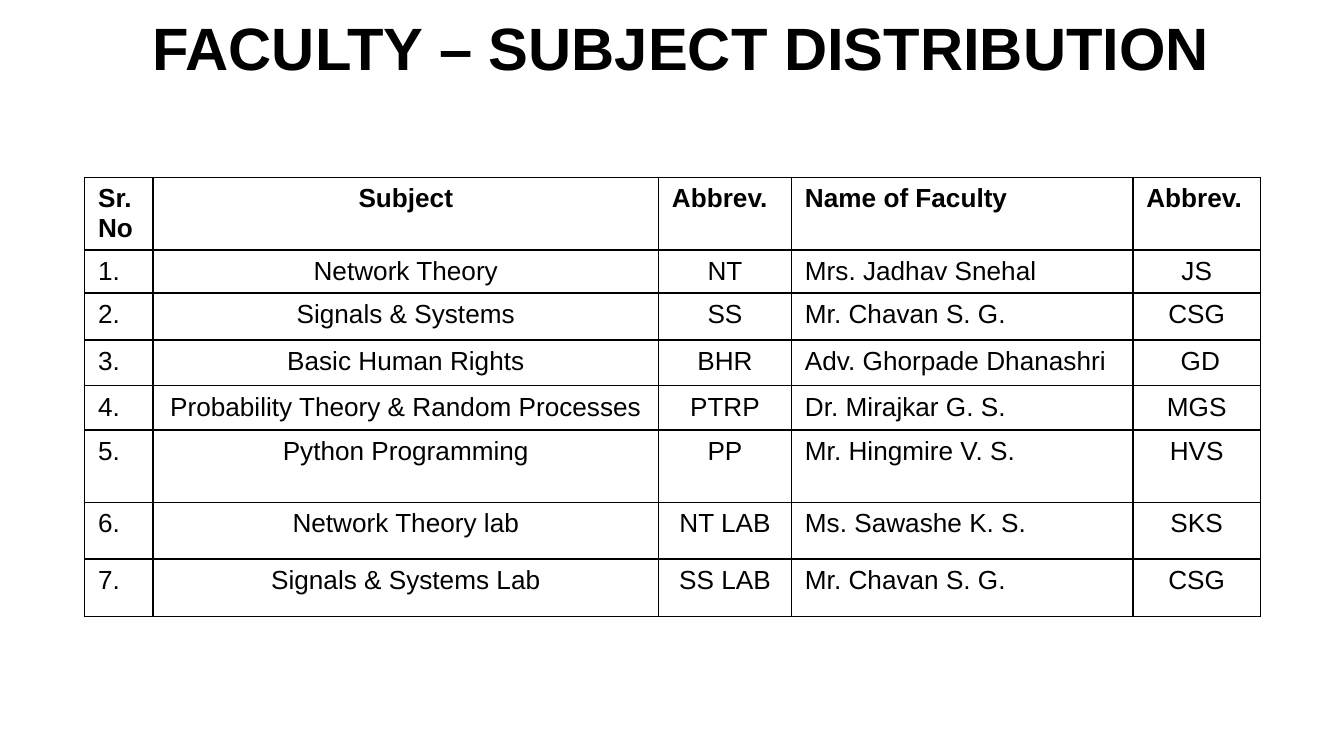
"""Build the faculty and subject distribution slide."""
import lxml.etree
import pptx
import pptx.dml.color
import pptx.enum.text
import pptx.oxml.ns
import pptx.util

Inches = pptx.util.Inches
Pt = pptx.util.Pt
ALIGN = pptx.enum.text.PP_ALIGN
ANCHOR = pptx.enum.text.MSO_ANCHOR
BLACK = pptx.dml.color.RGBColor(0x00, 0x00, 0x00)
WHITE = pptx.dml.color.RGBColor(0xFF, 0xFF, 0xFF)

HEADER = ["Sr.\nNo", "Subject", "Abbrev.", "Name of Faculty", "Abbrev."]
SUBJECTS = [
    ("Network Theory", "NT", "Mrs. Jadhav Snehal", "JS"),
    ("Signals & Systems", "SS", "Mr. Chavan S. G.", "CSG"),
    ("Basic Human Rights", "BHR", "Adv. Ghorpade Dhanashri", " GD"),
    ("Probability Theory & Random Processes", "PTRP", "Dr. Mirajkar G. S.", "MGS"),
    ("Python Programming", "PP", "Mr. Hingmire V. S.", "HVS"),
    ("Network Theory lab", "NT LAB", "Ms. Sawashe K. S.", "SKS"),
    ("Signals & Systems Lab", "SS LAB", "Mr. Chavan S. G.", "CSG"),
]
COL_WIDTHS = [0.51, 3.76, 0.99, 2.54, 0.95]
ROW_HEIGHTS = [0.54, 0.32, 0.35, 0.34, 0.33, 0.54, 0.42, 0.43]
HEADER_ALIGN = [ALIGN.LEFT, ALIGN.CENTER, ALIGN.LEFT, ALIGN.LEFT, ALIGN.LEFT]
BODY_ALIGN = [ALIGN.LEFT, ALIGN.CENTER, ALIGN.CENTER, ALIGN.LEFT, ALIGN.CENTER]


def write(tf, text, size=14, bold=False, align=ALIGN.LEFT, font="Arial", color=BLACK):
    tf.word_wrap = True
    for i, line in enumerate(text.split("\n")):
        p = tf.add_paragraph() if i else tf.paragraphs[0]
        p.alignment = align
        r = p.add_run()
        r.text = line
        r.font.name = font
        r.font.size = Pt(size)
        r.font.bold = bold
        r.font.color.rgb = color


class Deck:
    def __init__(self, width, line=BLACK, line_width=1):
        self.prs = pptx.Presentation()
        self.prs.slide_width = Inches(width)
        self.prs.slide_height = Inches(width) * 9 // 16
        self.line, self.line_width = line, line_width
        self.s = self.prs.slides.add_slide(self.prs.slide_layouts[5])
        self.s.background.fill.solid()
        self.s.background.fill.fore_color.rgb = WHITE

    def title(self, text, left, top, width, height):
        sp = self.s.shapes.title
        sp.left, sp.top = Inches(left), Inches(top)
        sp.width, sp.height = Inches(width), Inches(height)
        tf = sp.text_frame
        tf.auto_size = pptx.enum.text.MSO_AUTO_SIZE.NONE
        tf.vertical_anchor = ANCHOR.MIDDLE
        tf.margin_top, tf.margin_bottom = Inches(0), Inches(0.6)
        write(tf, text, size=32, bold=True, align=ALIGN.CENTER)

    def border(self, cell):
        tcPr = cell._tc.get_or_add_tcPr()
        qn = pptx.oxml.ns.qn
        for i, side in enumerate(("a:lnL", "a:lnR", "a:lnT", "a:lnB")):
            ln = lxml.etree.Element(qn(side), w=str(Pt(self.line_width)))
            fill = lxml.etree.SubElement(ln, qn("a:solidFill"))
            lxml.etree.SubElement(fill, qn("a:srgbClr"), val=str(self.line))
            tcPr.insert(i, ln)

    def table(self, rows, left, top, widths, heights):
        table = self.s.shapes.add_table(
            len(rows), len(widths), Inches(left), Inches(top),
            Inches(sum(widths)), Inches(sum(heights))).table
        for col, width in zip(table.columns, widths):
            col.width = Inches(width)
        for i, (row, height) in enumerate(zip(rows, heights)):
            table.rows[i].height = Inches(height)
            aligns = BODY_ALIGN if i else HEADER_ALIGN
            for j, (text, align) in enumerate(zip(row, aligns)):
                cell = table.cell(i, j)
                cell.fill.solid()
                cell.fill.fore_color.rgb = WHITE
                self.border(cell)
                write(cell.text_frame, text, bold=i == 0, align=align)


def main():
    deck = Deck(10)
    deck.title("FACULTY – SUBJECT DISTRIBUTION", 0.41, 0.19, 9.32, 0.92)
    rows = [HEADER] + [(f"{n}.", *row) for n, row in enumerate(SUBJECTS, 1)]
    deck.table(rows, 0.63, 1.32, COL_WIDTHS, ROW_HEIGHTS)
    deck.prs.save("out.pptx")


if __name__ == "__main__":
    main()
